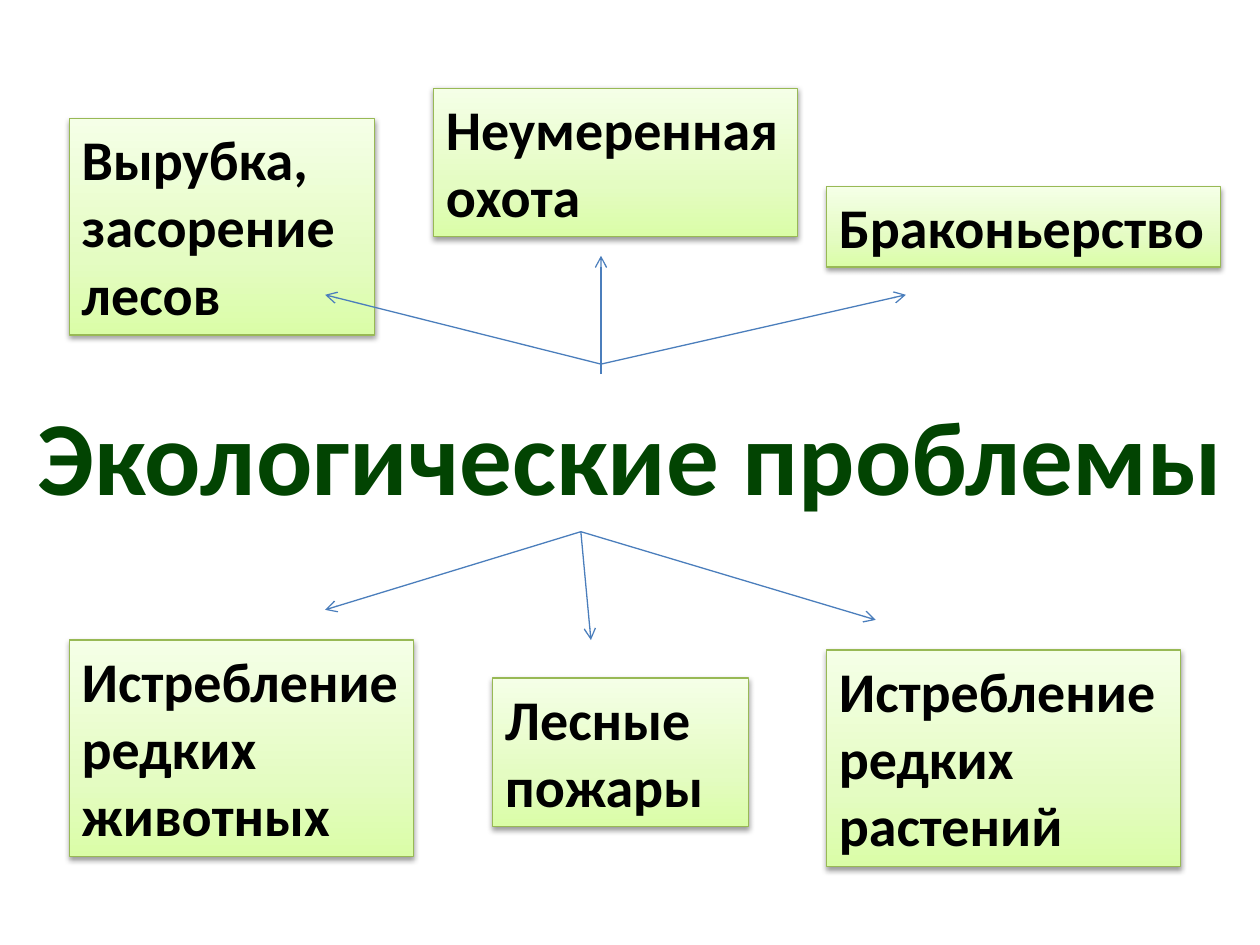
from copy import deepcopy
from dataclasses import dataclass

from lxml.etree import SubElement
from pptx import Presentation
from pptx.dml.color import RGBColor
from pptx.enum.shapes import MSO_CONNECTOR, MSO_SHAPE
from pptx.enum.text import MSO_ANCHOR, MSO_AUTO_SIZE, PP_ALIGN
from pptx.oxml import parse_xml
from pptx.oxml.ns import nsdecls, qn
from pptx.slide import Slide
from pptx.text.text import TextFrame
from pptx.util import Inches, Pt

TITLE_GREEN = RGBColor(0x02, 0x44, 0x02)
BLACK = RGBColor(0x00, 0x00, 0x00)
BORDER_GREEN = RGBColor(0x98, 0xB9, 0x55)
ARROW_BLUE = RGBColor(0x4B, 0x7E, 0xBC)
GRADIENT = (
    (0, RGBColor(0xDA, 0xFD, 0xA7)),
    (0.35, RGBColor(0xE4, 0xFC, 0xC2)),
    (1, RGBColor(0xF5, 0xFF, 0xE7)),
)
SHADOW = (
    f'<a:outerShdw {nsdecls("a")} blurRad="39370" dist="20320" dir="5400000" rotWithShape="0">'
    '<a:srgbClr val="000000"><a:alpha val="38000"/></a:srgbClr></a:outerShdw>'
)
TITLE_OUTLINE = (
    f'<a:ln {nsdecls("a")} w="17780"><a:solidFill><a:srgbClr val="FFFFFF"/></a:solidFill></a:ln>'
)


@dataclass
class Problem:
    lines: tuple[str, ...]
    left: float
    top: float
    width: float
    height: float
    wrap: bool = True


@dataclass
class ArrowFan:
    start: tuple[float, float]
    ends: tuple[tuple[float, float], ...]


PROBLEMS = (
    Problem(("Вырубка,", "засорение лесов"), 0.55, 0.94, 2.42, 1.72),
    Problem(("Неумеренная охота",), 3.44, 0.7, 2.89, 1.18),
    Problem(("Браконьерство",), 6.56, 1.48, 3.13, 0.64, wrap=False),
    Problem(("Лесные пожары",), 3.91, 5.38, 2.03, 1.18),
    Problem(("Истребление редких животных",), 0.55, 5.08, 2.73, 1.72),
    Problem(("Истребление редких растений",), 6.56, 5.16, 2.81, 1.72),
)
FANS = (
    ArrowFan((4.77, 2.89), ((2.58, 2.34), (7.19, 2.34))),
    ArrowFan((4.77, 2.97), ((4.77, 2.03),)),
    ArrowFan((4.61, 4.22), ((6.95, 4.92), (2.58, 4.84), (4.69, 5.08))),
)


def write_text(frame: TextFrame, lines: tuple[str, ...], size: int, color: RGBColor,
               align: PP_ALIGN, wrap: bool) -> None:
    settings = {"word_wrap": wrap, "auto_size": MSO_AUTO_SIZE.SHAPE_TO_FIT_TEXT,
                "vertical_anchor": MSO_ANCHOR.TOP}
    for name, value in settings.items():
        setattr(frame, name, value)
    font_format = {"name": "Calibri", "size": Pt(size), "bold": True}
    for index, line in enumerate(lines):
        para = frame.add_paragraph() if index else frame.paragraphs[0]
        para.alignment = align
        span = para.add_run()
        span.text = line
        for name, value in font_format.items():
            setattr(span.font, name, value)
        span.font.color.rgb = color


def add_title(page: Slide) -> None:
    box = page.shapes.add_textbox(Inches(0.16), Inches(3.05), Inches(9.69), Inches(1.11))
    write_text(box.text_frame, ("Экологические проблемы",), 60, TITLE_GREEN,
               PP_ALIGN.CENTER, wrap=False)
    span = box.text_frame.paragraphs[0].runs[0]
    span._r.get_or_add_rPr().insert(0, parse_xml(TITLE_OUTLINE))


def add_problem(page: Slide, problem: Problem) -> None:
    box = page.shapes.add_shape(
        MSO_SHAPE.RECTANGLE, Inches(problem.left), Inches(problem.top),
        Inches(problem.width), Inches(problem.height))
    properties = box._element.spPr

    # Three-stop gradient, darkest at the bottom
    box.fill.gradient()
    box.fill.gradient_angle = 90
    stop_list = properties.find(".//" + qn("a:gsLst"))
    stop_list.append(deepcopy(stop_list[-1]))
    for stop, (position, color) in zip(box.fill.gradient_stops, GRADIENT):
        stop.position = position
        stop.color.rgb = color

    # Border and soft shadow
    box.line.color.rgb = BORDER_GREEN
    box.line.width = Pt(0.75)
    box.shadow.inherit = False
    properties.find(qn("a:effectLst")).append(parse_xml(SHADOW))

    write_text(box.text_frame, problem.lines, 32, BLACK, PP_ALIGN.LEFT, problem.wrap)


def add_arrow(page: Slide, start: tuple[float, float], end: tuple[float, float]) -> None:
    points = [Inches(value) for value in (*start, *end)]
    arrow = page.shapes.add_connector(MSO_CONNECTOR.STRAIGHT, *points)
    arrow.line.color.rgb = ARROW_BLUE
    arrow.line.width = Pt(0.75)
    SubElement(arrow.line._get_or_add_ln(), qn("a:tailEnd"), type="arrow")
    SubElement(arrow._element.spPr, qn("a:effectLst"))


def main() -> None:
    deck = Presentation()
    deck.slide_width, deck.slide_height = Inches(10), Inches(7.5)
    page = deck.slides.add_slide(deck.slide_layouts[6])

    add_title(page)
    for problem in PROBLEMS:
        add_problem(page, problem)
    # Arrows lie above the boxes
    for fan in FANS:
        for end in fan.ends:
            add_arrow(page, fan.start, end)

    deck.save("out.pptx")


if __name__ == "__main__":
    main()
